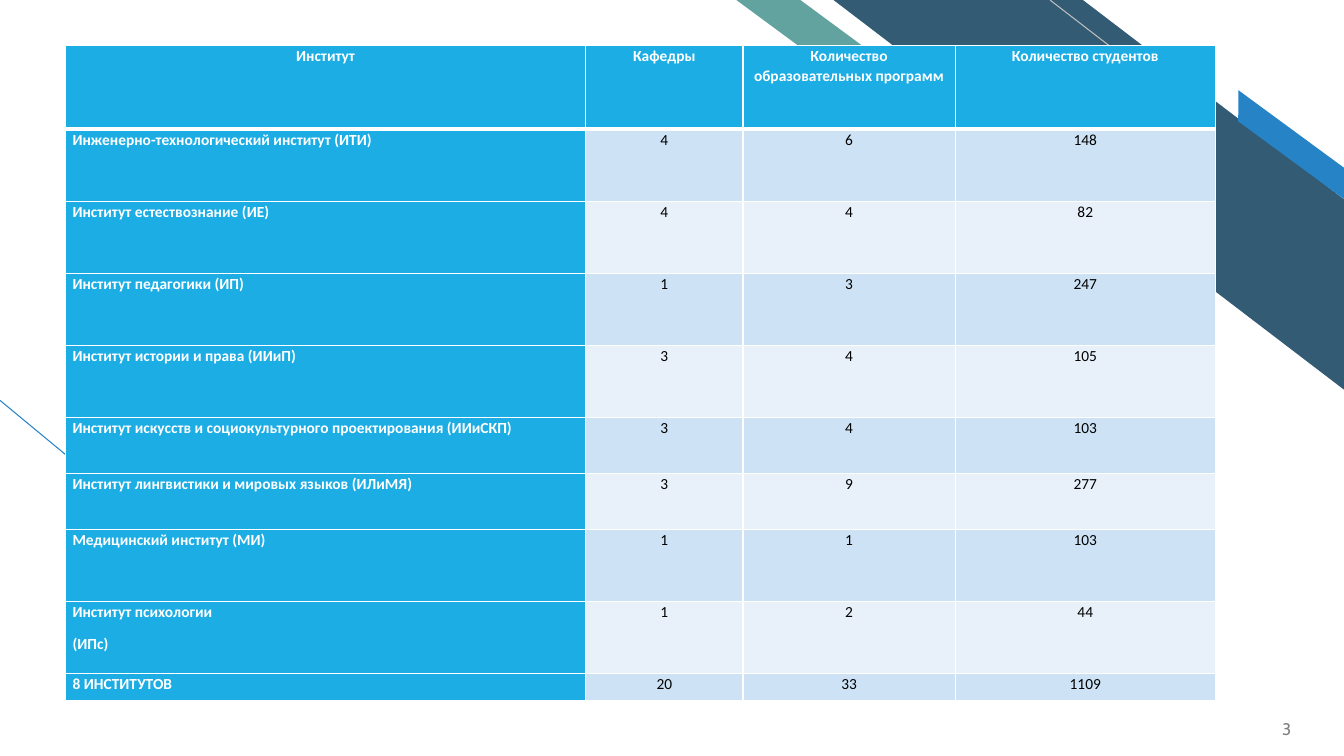
from lxml.etree import SubElement
from pptx import Presentation
from pptx.dml.color import RGBColor
from pptx.enum.shapes import MSO_CONNECTOR, MSO_SHAPE
from pptx.enum.text import MSO_ANCHOR, PP_ALIGN
from pptx.oxml.ns import qn
from pptx.util import Pt

COLORS = {
    "sky": "1CADE4", "blue": "2683C6", "navy": "335B74", "teal": "62A39F",
    "silver": "BFBFBF", "gray": "808080", "white": "FFFFFF", "black": "000000",
    "band_dark": "CDE3F5", "band_light": "E8F1FA",
}
HEADERS = ["Институт", "Кафедры", "Количество образовательных программ",
           "Количество студентов"]
# name, departments, programmes, students, row height
INSTITUTES = [
    ("Инженерно-технологический институт (ИТИ)", 4, 6, 148, 51.5),
    ("Институт естествознание (ИЕ)", 4, 4, 82, 51.5),
    ("Институт педагогики (ИП)", 1, 3, 247, 51.5),
    ("Институт истории и права (ИИиП)", 3, 4, 105, 51.5),
    ("Институт искусств и социокультурного проектирования (ИИиСКП)", 3, 4, 103, 40),
    ("Институт лингвистики и мировых языков (ИЛиМЯ)", 3, 9, 277, 40),
    ("Медицинский институт (МИ)", 1, 1, 103, 51.5),
    ("Институт психологии\n(ИПс)", 1, 2, 44, 51.5),
    ("8 ИНСТИТУТОВ", 20, 33, 1109, 19.5),
]
HEADER_HEIGHT = 60
COLUMN_WIDTHS = [371.5, 112.5, 151.5, 186]


def color(name):
    return RGBColor.from_string(COLORS[name])


def add_line(slide, start, end, color_name):
    line = slide.shapes.add_connector(
        MSO_CONNECTOR.STRAIGHT, *(Pt(value) for value in (*start, *end)))
    line.line.color.rgb = color(color_name)
    line.line.width = Pt(0.75)
    SubElement(line.element.spPr, qn("a:effectLst"))


def add_flipped_shape(slide, preset, box, adjustment, color_name, rotation=0):
    """Add a filled preset shape mirrored left to right."""
    shape = slide.shapes.add_shape(preset, *(Pt(value) for value in box))
    shape.adjustments[0] = adjustment
    shape.rotation = rotation
    shape.element.spPr.find(qn("a:xfrm")).set("flipH", "1")
    shape.shadow.inherit = False
    shape.fill.solid()
    shape.fill.fore_color.rgb = color(color_name)
    shape.line.fill.background()


def format_paragraph(paragraph, size, font_name, color_name, bold, alignment):
    paragraph.alignment = alignment
    paragraph.font.size = Pt(size)
    paragraph.font.name = font_name
    paragraph.font.bold = bold
    paragraph.font.color.rgb = color(color_name)


def add_slide_number(slide, left, top, width, height):
    box = slide.shapes.add_textbox(Pt(left), Pt(top), Pt(width), Pt(height))
    frame = box.text_frame
    frame.word_wrap = True
    frame.vertical_anchor = MSO_ANCHOR.MIDDLE
    frame.text = "3"
    format_paragraph(frame.paragraphs[0], 12, "Cabin", "gray", False, PP_ALIGN.RIGHT)


def add_corner_stripes(slide, left, top, width, height):
    add_flipped_shape(slide, MSO_SHAPE.DIAGONAL_STRIPE,
                      (left + 69.4, top, width - 69, height), 0.512, "navy")
    add_line(slide, (left + 322, top + 75.6), (left + 224, top), "silver")
    add_flipped_shape(slide, MSO_SHAPE.PARALLELOGRAM,
                      (left + 343, top + 94.3, 106.6, 18), 0.72, "blue", 36.3)
    add_flipped_shape(slide, MSO_SHAPE.PARALLELOGRAM,
                      (left, top, 114, 50.4), 1.356, "teal")


def add_borders(cell, widths):
    """Draw white borders; widths are in points by side (L, R, T, B)."""
    properties = cell._tc.get_or_add_tcPr()
    for side, width in widths.items():
        border = SubElement(properties, qn(f"a:ln{side}"), w=str(Pt(width)))
        fill = SubElement(border, qn("a:solidFill"))
        SubElement(fill, qn("a:srgbClr"), val=COLORS["white"])


def fill_cell(cell, text, row, column):
    is_heading = row == 0 or column == 0
    band = "band_dark" if row % 2 else "band_light"
    add_borders(cell, {"L": 1, "R": 1, "T": 3 if row == 1 else 1,
                       "B": 3 if row == 0 else 1})
    cell.fill.solid()
    cell.fill.fore_color.rgb = color("sky" if is_heading else band)
    cell.margin_left = cell.margin_right = Pt(5)
    cell.margin_top = cell.margin_bottom = Pt(0)
    cell.text = str(text)
    for paragraph in cell.text_frame.paragraphs:
        paragraph.line_spacing = 1.07
        paragraph.space_after = Pt(8)
        format_paragraph(paragraph, 11, "Calibri", "white" if is_heading else "black",
                         is_heading,
                         PP_ALIGN.LEFT if row and column == 0 else PP_ALIGN.CENTER)


def add_institute_table(slide, left, top):
    rows = [(*HEADERS, HEADER_HEIGHT), *INSTITUTES]
    height = sum(row[-1] for row in rows)
    table = slide.shapes.add_table(len(rows), len(HEADERS), Pt(left), Pt(top),
                                   Pt(sum(COLUMN_WIDTHS)), Pt(height)).table
    for column, width in zip(table.columns, COLUMN_WIDTHS):
        column.width = Pt(width)
    for row_index, (*values, row_height) in enumerate(rows):
        table.rows[row_index].height = Pt(row_height)
        for column_index, value in enumerate(values):
            fill_cell(table.cell(row_index, column_index), value,
                      row_index, column_index)


def build_institutes_slide(presentation):
    slide = presentation.slides.add_slide(presentation.slide_layouts[6])
    add_line(slide, (150, 410), (0, 286), "blue")
    add_corner_stripes(slide, 526, 0, 434, 278.6)
    add_slide_number(slide, 853, 510, 76.5, 21.6)
    add_institute_table(slide, 46.8, 32.4)


def main():
    presentation = Presentation()
    presentation.slide_width = Pt(960)
    presentation.slide_height = Pt(540)
    build_institutes_slide(presentation)
    presentation.save("out.pptx")


if __name__ == "__main__":
    main()
